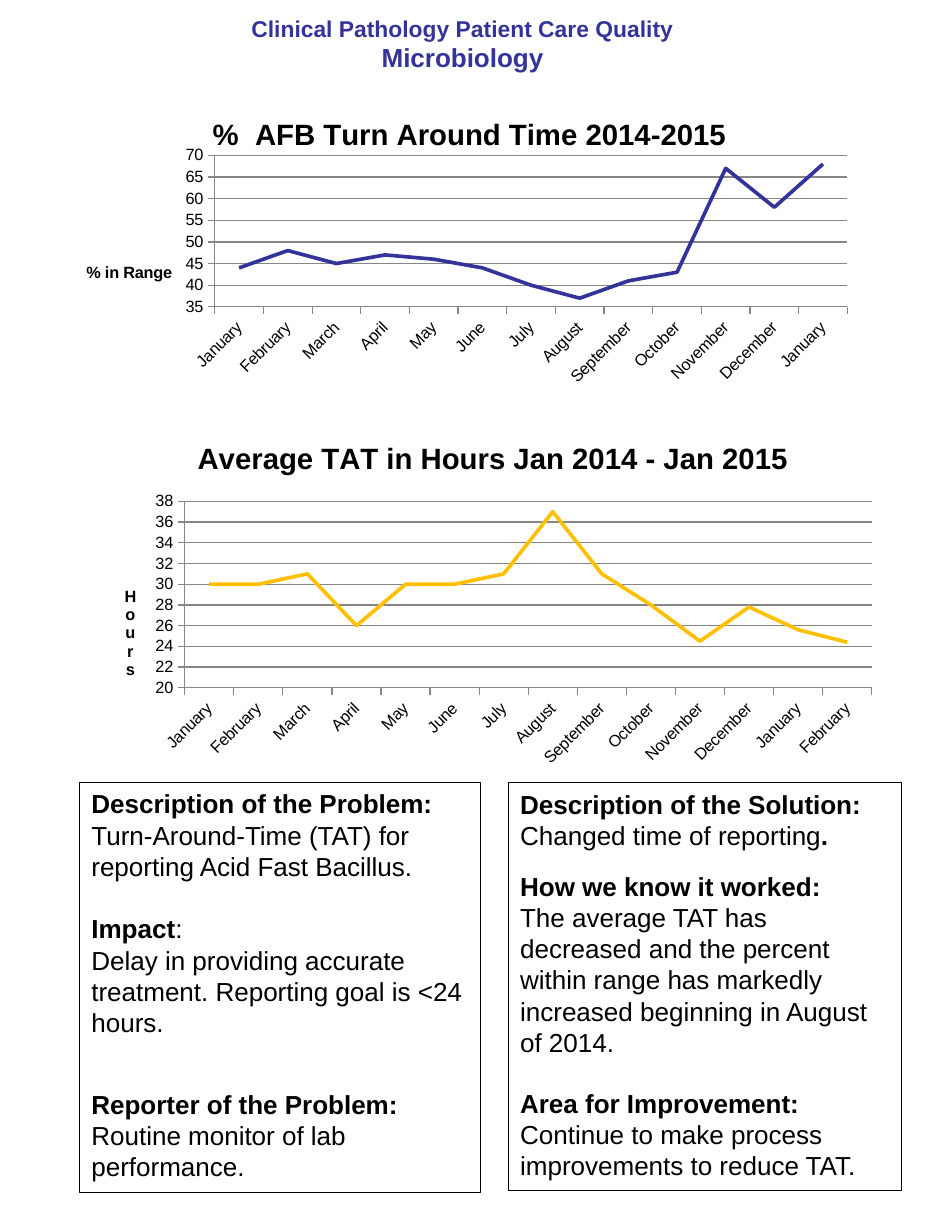
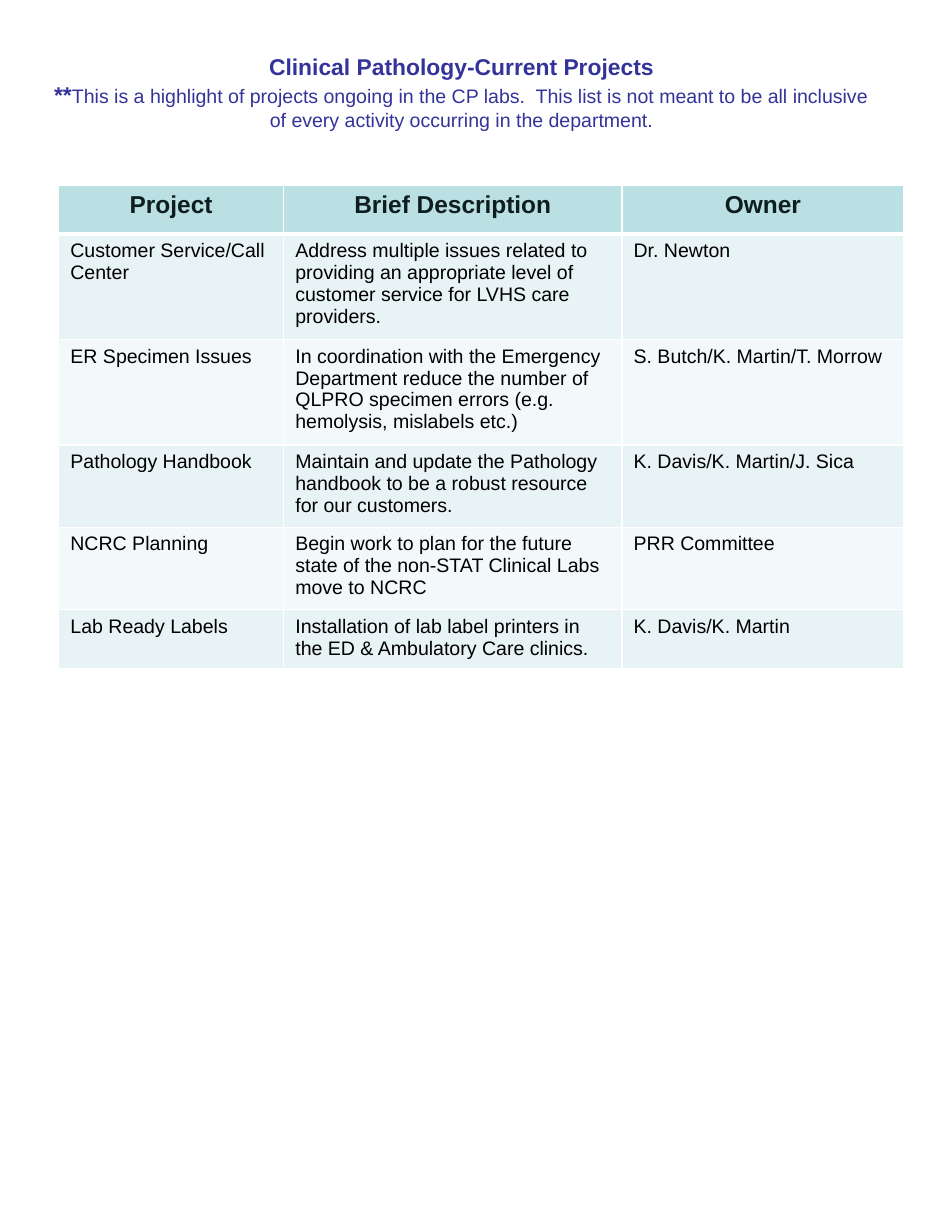
from lxml import etree
from pptx import Presentation
from pptx import util as u
from pptx.chart.data import CategoryChartData
from pptx.dml.color import RGBColor
from pptx.enum import chart as ch, shapes, text
from pptx.oxml.ns import qn

FONT = "Arial"
NAVY, BLACK, GRID, WHITE, GOLD = "333399", "000000", "868686", "FFFFFF", "FFC000"
HEADER_FILL, HEADER_TEXT = "BBE0E3", "0E1E20"
BAND_FILLS = ("E7F3F4", "F3F9FA")
MONTHS = ["January", "February", "March", "April", "May", "June", "July",
          "August", "September", "October", "November", "December"]


def color(hex_code):
    return RGBColor.from_string(hex_code)


def pts(*lengths):
    return [u.Pt(length) for length in lengths]


def set_font(font, size, hex_code, bold=False):
    font.name, font.size, font.bold = FONT, u.Pt(size), bold
    font.color.rgb = color(hex_code)


def heading(slide, box, lines, anchor):
    """Centred navy heading; each line is a list of (text, size, bold)."""
    frame = slide.shapes.add_textbox(*pts(*box)).text_frame
    frame.word_wrap = True
    frame.vertical_anchor = anchor
    for i, runs in enumerate(lines):
        line = frame.paragraphs[0] if i == 0 else frame.add_paragraph()
        line.alignment = text.PP_ALIGN.CENTER
        for words, size, bold in runs:
            run = line.add_run()
            run.text = words
            set_font(run.font, size, NAVY, bold)


def set_layout(element, after, inner=False, **fractions):
    """Place a chart part by fractions of the chart's size."""
    old = element.find(qn("c:layout"))
    if old is not None:
        element.remove(old)
    layout = etree.Element(qn("c:layout"))
    manual = etree.SubElement(layout, qn("c:manualLayout"))
    settings = {"layoutTarget": "inner"} if inner else {}
    settings.update(xMode="edge", yMode="edge", **fractions)
    for tag, value in settings.items():
        etree.SubElement(manual, qn("c:" + tag)).set("val", str(value))
    if after is None:
        element.insert(0, layout)
    else:
        after.addnext(layout)


def gray_line(line):
    line.color.rgb, line.width = color(GRID), u.Pt(0.75)


def trend_chart(slide, box, title, months, values, line_color, plot_box,
                scale, unit, unit_at, unit_direction, number_format):
    data = CategoryChartData(number_format="General")
    data.categories = months
    data.add_series("Series 1", values)
    chart = slide.shapes.add_chart(ch.XL_CHART_TYPE.LINE, *pts(*box), data).chart
    set_font(chart.font, 10, BLACK)
    chart.has_legend = False

    chart.has_title = True
    title_line = chart.chart_title.text_frame.paragraphs[0]
    title_line.text = title
    set_font(title_line.font, 18, BLACK, True)
    chart.chart_title.include_in_layout = False

    plot = chart.plots[0]
    plot.vary_by_categories = False
    series = plot.series[0]
    series.smooth = False
    series.marker.style = ch.XL_MARKER_STYLE.NONE
    series.format.line.color.rgb = color(line_color)
    series.format.line.width = u.Pt(2.25)

    # Axes
    for axis in (chart.category_axis, chart.value_axis):
        axis.major_tick_mark = ch.XL_TICK_MARK.OUTSIDE
        axis.minor_tick_mark = ch.XL_TICK_MARK.NONE
        set_font(axis.tick_labels.font, 10, BLACK)
        gray_line(axis.format.line)
    slant = chart.category_axis._element.find(qn("c:txPr")).find(qn("a:bodyPr"))
    slant.set("rot", "-2700000")
    slant.set("vert", "horz")
    hours = chart.value_axis
    hours.minimum_scale, hours.maximum_scale, hours.major_unit = scale
    hours.has_major_gridlines = True
    gray_line(hours.major_gridlines.format.line)
    hours.tick_labels.number_format = number_format
    hours.tick_labels.number_format_is_linked = False

    # Unit beside the value axis
    unit_frame = hours.axis_title.text_frame
    unit_frame.paragraphs[0].text = unit
    set_font(unit_frame.paragraphs[0].font, 10, BLACK, True)
    direction = unit_frame._txBody.find(qn("a:bodyPr"))
    direction.set("rot", "0")
    direction.set("vert", unit_direction)
    unit_title = hours.axis_title._element
    set_layout(unit_title, unit_title.find(qn("c:tx")), x=unit_at[0], y=unit_at[1])

    plot_area = chart._chartSpace.chart.plotArea
    set_layout(plot_area, None, inner=True, **dict(zip("xywh", plot_box)))


def story_box(slide, box, sections):
    """Outlined box of sections: (heading, heading end, body, body end, gap after)."""
    panel = slide.shapes.add_shape(shapes.MSO_SHAPE.RECTANGLE, *pts(*box))
    panel.shadow.inherit = False
    panel.fill.background()
    panel.line.color.rgb, panel.line.width = color(BLACK), u.Pt(0.75)
    frame = panel.text_frame
    frame.word_wrap = True
    frame.vertical_anchor = text.MSO_ANCHOR.TOP
    line = frame.paragraphs[0]
    for i, (head, head_end, body, body_end, gap) in enumerate(sections):
        if i:
            line = frame.add_paragraph()
        for words, ending, bold, space in ((head, head_end, True, 0),
                                           (body, body_end, False, gap)):
            if not bold:
                line = frame.add_paragraph()
            line.alignment = text.PP_ALIGN.LEFT
            line.space_after = u.Pt(space)
            set_font(line.font, 16, BLACK, bold)
            for part, weight in ((words, bold), (ending, not bold)):
                if part:
                    run = line.add_run()
                    run.text = part
                    set_font(run.font, 16, BLACK, weight)


def cell_borders(cell, bottom):
    properties = cell._tc.get_or_add_tcPr()
    for i, (side, width) in enumerate((("L", 1), ("R", 1), ("T", 1), ("B", bottom))):
        edge = etree.Element(qn("a:ln" + side), w=str(u.Pt(width)))
        fill = etree.SubElement(edge, qn("a:solidFill"))
        etree.SubElement(fill, qn("a:srgbClr"), val=WHITE)
        properties.insert(i, edge)


def project_table(slide, box, widths, rows):
    table = slide.shapes.add_table(len(rows), len(widths), *pts(*box)).table
    for column, width in zip(table.columns, widths):
        column.width = u.Pt(width)
    for r, row in enumerate(rows):
        table.rows[r].height = u.Pt(box[3] / len(rows))
        is_header = r == 0
        for c, words in enumerate(row):
            cell = table.cell(r, c)
            cell.fill.solid()
            cell.fill.fore_color.rgb = color(
                HEADER_FILL if is_header else BAND_FILLS[(r - 1) % 2])
            cell_borders(cell, 3 if is_header else 1)
            line = cell.text_frame.paragraphs[0]
            line.text = words
            if is_header:
                line.alignment = text.PP_ALIGN.CENTER
                set_font(line.font, 15, HEADER_TEXT, True)
            else:
                set_font(line.font, 12, BLACK)


def microbiology_slide(slide):
    heading(slide, (24.5, 5.75, 518.5, 42),
            [[("Clinical Pathology Patient Care Quality", 14, True)],
             [("Microbiology", 16, True)]], text.MSO_ANCHOR.MIDDLE)

    story_box(slide, (49, 480, 246, 252), [
        ("Description of the Problem:", "",
         "Turn-Around-Time (TAT) for reporting Acid Fast Bacillus.", "", 19),
        ("Impact", ":",
         "Delay in providing accurate treatment. Reporting goal is <24 hours.", "", 31),
        ("Reporter of the Problem:", "", "Routine monitor of lab performance.", "", 0)])
    story_box(slide, (312, 480, 241, 250.5), [
        ("Description of the Solution:", "", "Changed time of reporting", ".", 12),
        ("How we know it worked:", "",
         "The average TAT has decreased and the percent within range has "
         "markedly increased beginning in August of 2014.", "", 18),
        ("Area for Improvement:", "",
         "Continue to make process improvements to reduce TAT.", "", 0)])

    trend_chart(slide, (36, 60, 504, 186), "%  AFB Turn Around Time 2014-2015",
                MONTHS + MONTHS[:1],
                [44, 48, 45, 47, 46, 44, 40, 37, 41, 43, 67, 58, 68],
                NAVY, (0.19, 0.19, 0.77, 0.5), (35, 70, 5),
                "% in Range", (0.03, 0.53), "horz", "0")
    trend_chart(slide, (60, 258, 484.5, 216),
                "Average TAT in Hours Jan 2014 - Jan 2015",
                MONTHS + MONTHS[:2],
                [30, 30, 31, 26, 30, 30, 31, 37, 31, 28, 24.5, 27.8, 25.6, 24.4],
                GOLD, (0.11, 0.23, 0.87, 0.53), (20, 38, 2),
                "Hours", (0.03, 0.46), "wordArtVert", "General")


def projects_slide(slide):
    project_table(slide, (36, 114, 518.5, 177), (138, 207.5, 173), [
        ("Project", "Brief Description", "Owner"),
        ("Customer Service/Call Center",
         "Address multiple issues related to providing an appropriate level of "
         "customer service for LVHS care providers.", "Dr. Newton"),
        ("ER Specimen Issues",
         "In coordination with the Emergency Department reduce the number of "
         "QLPRO specimen errors (e.g. hemolysis, mislabels etc.)",
         "S. Butch/K. Martin/T. Morrow"),
        ("Pathology Handbook",
         "Maintain and update the Pathology handbook to be a robust resource "
         "for our customers.", "K. Davis/K. Martin/J. Sica"),
        ("NCRC Planning",
         "Begin work to plan for the future state of the non-STAT Clinical Labs "
         "move to NCRC", "PRR Committee"),
        ("Lab Ready Labels",
         "Installation of lab label printers in the ED & Ambulatory Care clinics.",
         "K. Davis/K. Martin")])
    heading(slide, (24, 12, 518.5, 72),
            [[("Clinical Pathology-Current Projects", 14, True)],
             [("**", 14, True),
              ("This is a highlight of projects ongoing in the CP labs.  This list is "
               "not meant to be all inclusive of every activity occurring in the "
               "department.", 12, False)]], text.MSO_ANCHOR.BOTTOM)


def main():
    deck = Presentation()
    deck.slide_width, deck.slide_height = pts(576, 756)
    for build in (microbiology_slide, projects_slide):
        build(deck.slides.add_slide(deck.slide_layouts[6]))
    deck.save("out.pptx")


if __name__ == "__main__":
    main()
